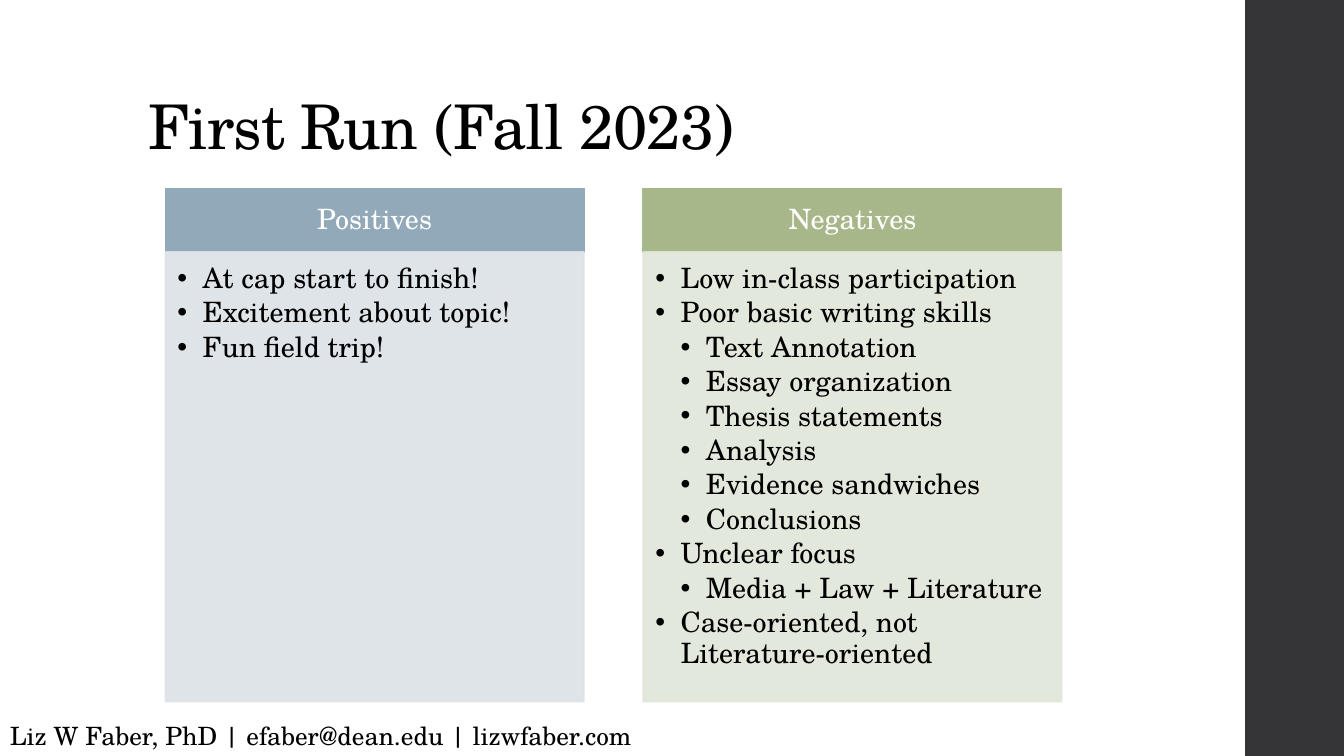
from lxml import etree
from pptx import Presentation
from pptx import util as u
from pptx.dml import color
from pptx.enum import shapes, text
from pptx.oxml import ns

FONT = "TeX Gyre Schola"
COLUMN_WIDTH, HEADING_HEIGHT, LIST_HEIGHT = 4.15, 0.63, 4.46
COLUMN_LEFT, COLUMN_TOP, COLUMN_PITCH = 1.64, 1.87, 4.74

# heading, heading colour, list colour, list items as (level, wording)
COLUMNS = [
    ("Positives", "92A9B9", "DCE2E6", [
        (0, "At cap start to finish!"),
        (0, "Excitement about topic!"),
        (0, "Fun field trip!"),
    ]),
    ("Negatives", "A7B789", "E1E6DA", [
        (0, "Low in-class participation"),
        (0, "Poor basic writing skills"),
        (1, "Text Annotation"),
        (1, "Essay organization"),
        (1, "Thesis statements"),
        (1, "Analysis"),
        (1, "Evidence sandwiches"),
        (1, "Conclusions"),
        (0, "Unclear focus"),
        (1, "Media + Law + Literature"),
        (0, "Case-oriented, not Literature-oriented"),
    ]),
]


def set_color(target, value):
    target.rgb = color.RGBColor.from_string(value)


def place(shape, left, top, width, height):
    shape.left, shape.top = u.Inches(left), u.Inches(top)
    shape.width, shape.height = u.Inches(width), u.Inches(height)


def paint(shape, value, opacity=100):
    shape.fill.solid()
    shape.line.fill.solid()
    shape.line.width = u.Pt(1.1)
    for fill in (shape.fill, shape.line.fill):
        set_color(fill.fore_color, value)
    if opacity < 100:
        for rgb in shape._element.spPr.iter(ns.qn("a:srgbClr")):
            etree.SubElement(rgb, ns.qn("a:alpha")).set("val", str(opacity * 1000))


def set_frame(shape, anchor, insets=(0.1, 0.05, 0.1, 0.05)):
    frame = shape.text_frame
    frame.word_wrap = True
    frame.auto_size = text.MSO_AUTO_SIZE.NONE
    frame.vertical_anchor = anchor
    (frame.margin_left, frame.margin_top,
     frame.margin_right, frame.margin_bottom) = map(u.Inches, insets)
    return frame


def set_font(paragraph, size, value="000000"):
    font = paragraph.font
    font.name, font.size, font.bold = FONT, u.Pt(size), False
    set_color(font.color, value)


def set_spacing(paragraph, after=0):
    paragraph.line_spacing = 0.9
    paragraph.space_before = u.Pt(0)
    paragraph.space_after = u.Pt(after)


def add_bullet(paragraph):
    properties = paragraph._p.get_or_add_pPr()
    properties.set("marL", str(u.Inches(0.25 * (paragraph.level + 1))))
    properties.set("indent", str(u.Inches(-0.25)))
    etree.SubElement(properties, ns.qn("a:buChar")).set("char", "•")


def fill_title(title, left, top, width, height):
    place(title, left, top, width, height)
    frame = set_frame(title, text.MSO_ANCHOR.BOTTOM)
    frame.text = "First Run (Fall 2023)"
    paragraph = frame.paragraphs[0]
    paragraph.alignment = text.PP_ALIGN.LEFT
    set_spacing(paragraph)
    set_font(paragraph, 44)
    paragraph.runs[0].font._element.set("spc", "-50")


def fill_column(heading, body, left, top, column):
    name, heading_color, body_color, items = column

    # Heading band
    place(heading, left, top, COLUMN_WIDTH, HEADING_HEIGHT)
    paint(heading, heading_color)
    frame = set_frame(heading, text.MSO_ANCHOR.MIDDLE, (0.16, 0.09, 0.16, 0.09))
    frame.text = name
    paragraph = frame.paragraphs[0]
    paragraph.alignment = text.PP_ALIGN.CENTER
    set_spacing(paragraph)
    set_font(paragraph, 20, "FFFFFF")

    # Bulleted list
    place(body, left, top + HEADING_HEIGHT, COLUMN_WIDTH, LIST_HEIGHT)
    paint(body, body_color, opacity=90)
    frame = set_frame(body, text.MSO_ANCHOR.TOP, (0.12, 0.12, 0.16, 0.17))
    frame.text = "\n".join(wording for _, wording in items)
    for paragraph, (level, _) in zip(frame.paragraphs, items):
        paragraph.level = level
        set_spacing(paragraph, after=3)
        add_bullet(paragraph)
        set_font(paragraph, 20)


def add_sidebar(slide, left, top, width, height):
    sidebar = slide.shapes.add_shape(
        shapes.MSO_SHAPE.RECTANGLE, *map(u.Inches, (left, top, width, height)))
    sidebar.shadow.inherit = False
    sidebar.fill.solid()
    set_color(sidebar.fill.fore_color, "353537")
    sidebar.line.fill.background()


def add_contact(slide, left, top, width, height):
    contact = slide.shapes.add_textbox(*map(u.Inches, (left, top, width, height)))
    frame = set_frame(contact, text.MSO_ANCHOR.TOP)
    frame.text = "Liz W Faber, PhD | efaber@dean.edu | lizwfaber.com"
    set_font(frame.paragraphs[0], 18)


def main():
    presentation = Presentation()
    presentation.slide_width = u.Inches(13.33)
    presentation.slide_height = u.Inches(7.5)
    comparison = presentation.slide_layouts.get_by_name("Comparison")
    slide = presentation.slides.add_slide(comparison)

    add_sidebar(slide, 12.35, 0, 0.98, 7.5)
    title, *parts = slide.placeholders
    fill_title(title, 1.37, 0.22, 10.6, 1.45)
    for index, column in enumerate(COLUMNS):
        heading, body = parts[2 * index:2 * index + 2]
        fill_column(heading, body, COLUMN_LEFT + index * COLUMN_PITCH, COLUMN_TOP, column)
    add_contact(slide, 0, 7.1, 6.94, 0.4)

    presentation.save("out.pptx")


if __name__ == "__main__":
    main()
